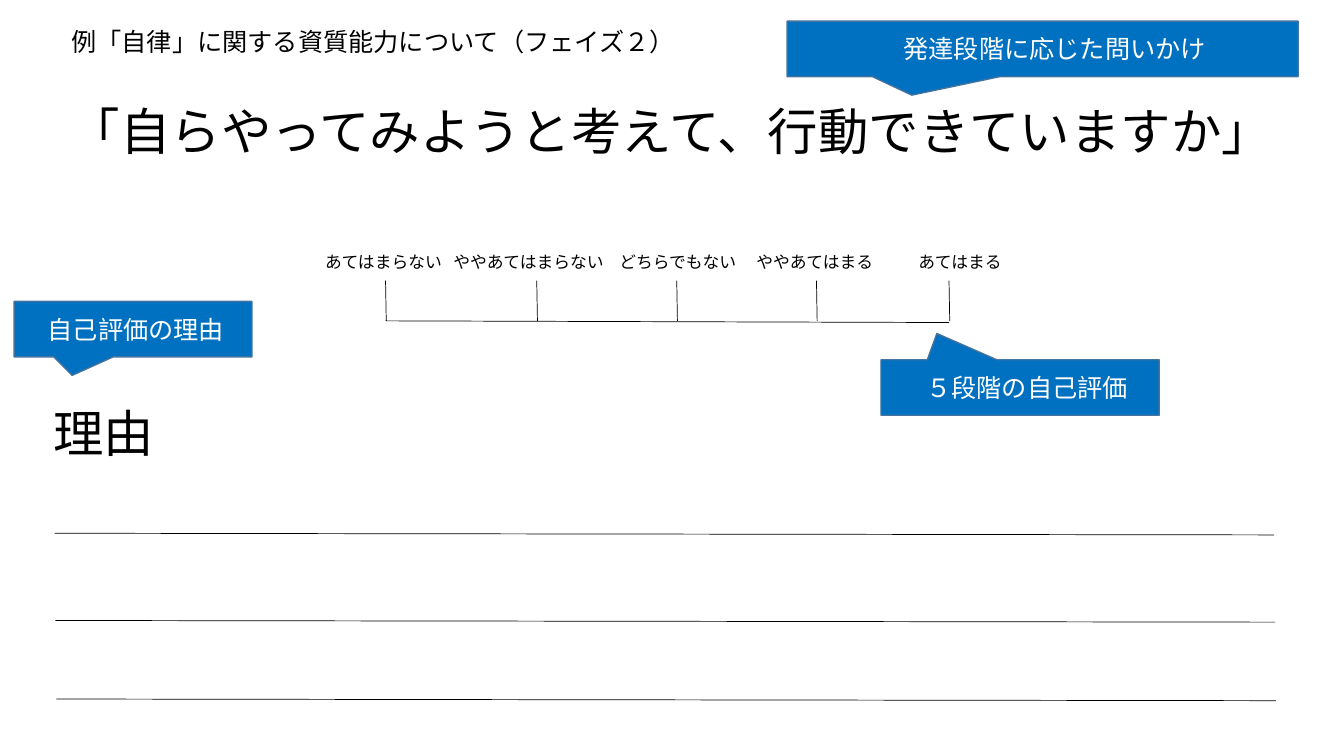
from lxml import etree
from pptx import Presentation
from pptx.dml.color import RGBColor
from pptx.enum import shapes, text
from pptx.oxml.ns import qn
from pptx.util import Pt

FACE = "Noto Sans CJK JP"
BLACK, WHITE, BLUE, EDGE = "000000", "FFFFFF", "0070C0", "43739E"
LEFT, MID = text.PP_ALIGN.LEFT, text.PP_ALIGN.CENTER
TOP, HALF = text.MSO_ANCHOR.TOP, text.MSO_ANCHOR.MIDDLE

# tick x, label centre x, label
SCALE = [
    (275.4, 274, "あてはまらない"),
    (383.4, 377.6, "ややあてはまらない"),
    (483.4, 484.2, "どちらでもない"),
    (583.2, 582.1, "ややあてはまる"),
    (677.9, 685.8, "あてはまる"),
]
# box, pointer, extra left inset, words
CALLS = [
    ((562.3, 15.1, 365, 39.6), (-0.256, 0.835), 17, "発達段階に応じた問いかけ"),
    ((629.3, 257, 198.7, 39.6), (-0.299, -0.974), 10, "５段階の自己評価"),
    ((10.1, 215.3, 169.9, 39.6), (-0.256, 0.835), 4, "自己評価の理由"),
]


def color(code):
    return RGBColor.from_string(code)


def write(shape, words, size, align=LEFT, tint=BLACK, anchor=TOP, inset=0):
    frame = shape.text_frame
    form = dict(word_wrap=True, vertical_anchor=anchor,
                auto_size=text.MSO_AUTO_SIZE.NONE,
                margin_left=Pt(7.2 + inset), margin_right=Pt(7.2),
                margin_top=Pt(3.6), margin_bottom=Pt(3.6))
    for key, val in form.items():
        setattr(frame, key, val)
    frame.text = words
    para = frame.paragraphs[0]
    para.alignment = align
    para.line_spacing = 1.0
    para.space_before = Pt(0)
    font = para.runs[0].font
    for key, val in dict(size=Pt(size), name=FACE, bold=False).items():
        setattr(font, key, val)
    font.color.rgb = color(tint)
    east = etree.SubElement(para.runs[0]._r.get_or_add_rPr(), qn("a:ea"))
    east.set("typeface", FACE)


def label(slide, box, words, size, align=LEFT):
    write(slide.shapes.add_textbox(*map(Pt, box)), words, size, align)


def rule(slide, *ends):
    line = slide.shapes.add_connector(
        shapes.MSO_CONNECTOR.STRAIGHT, *map(Pt, ends))
    line.line.color.rgb = color(BLACK)
    line.line.width = Pt(0.5)
    etree.SubElement(line._element.spPr, qn("a:effectLst"))


def head(slide, box):
    title = slide.shapes.title
    for key, val in zip(("left", "top", "width", "height"), box):
        setattr(title, key, Pt(val))
    write(title, "「自らやってみようと考えて、行動できていますか」", 36, MID)


def scale(slide, top):
    """Five labels above a row of ticks joined by a base line."""
    wide, drop, base = 180.8, 24, 52.8
    rule(slide, SCALE[0][0], top + base, SCALE[-1][0], top + base + 1.2)
    for tick, mid, words in SCALE:
        rule(slide, tick, top + drop, tick + 0.5, top + base)
        label(slide, (mid - wide / 2, top, wide, 36), words, 12, MID)


def reason(slide, left, top, width):
    """Heading with three slightly sloping answer lines."""
    label(slide, (left, top, width, 50.4), "理由", 36)
    for step, drop in enumerate((97.2, 159.5, 215.6)):
        start = left + 8 + step * 0.6
        rule(slide, start, top + drop, start + 871.2, top + drop + 1.2)


def call(slide, box, point, inset, words):
    shape = slide.shapes.add_shape(
        shapes.MSO_SHAPE.RECTANGULAR_CALLOUT, *map(Pt, box))
    shape.shadow.inherit = False
    for spot, val in enumerate(point):
        shape.adjustments[spot] = val
    shape.fill.solid()
    shape.fill.fore_color.rgb = color(BLUE)
    shape.line.color.rgb = color(EDGE)
    shape.line.width = Pt(1)
    write(shape, words, 18, MID, WHITE, HALF, inset)


def main():
    deck = Presentation()
    deck.slide_width, deck.slide_height = Pt(960), Pt(540)
    slide = deck.slides.add_slide(deck.slide_layouts[5])
    head(slide, (31, 67.7, 896.4, 50.4))
    reason(slide, 31, 283.7, 896.4)
    scale(slide, 176.4)
    label(slide, (43.9, 15.1, 500, 28.8),
          "例「自律」に関する資質能力について（フェイズ２）", 18)
    for item in CALLS:
        call(slide, *item)
    deck.save("out.pptx")


if __name__ == "__main__":
    main()
